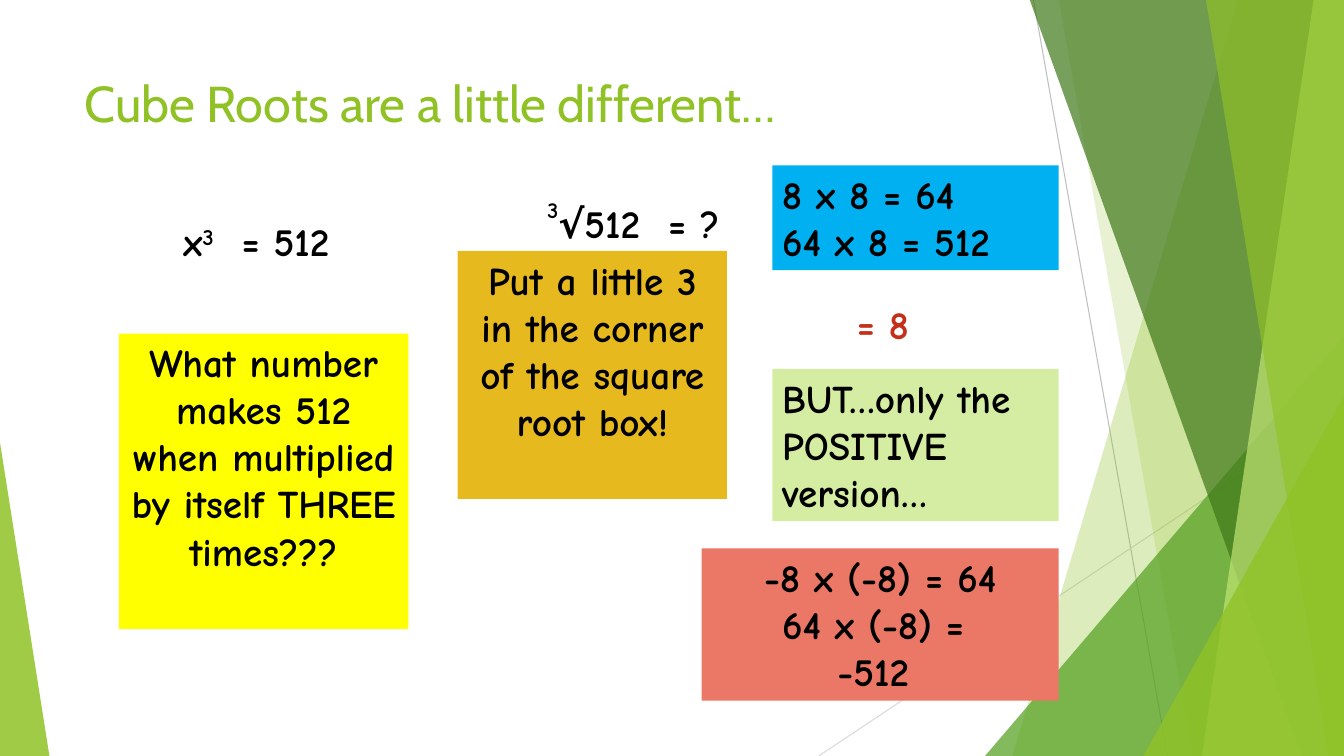
from dataclasses import dataclass

from lxml import etree
from pptx import Presentation
from pptx.dml.color import RGBColor
from pptx.enum.shapes import MSO_CONNECTOR, MSO_SHAPE
from pptx.enum.text import MSO_ANCHOR, PP_ALIGN
from pptx.oxml.ns import qn
from pptx.util import Inches, Pt

STRAIGHT = MSO_CONNECTOR.STRAIGHT
RECTANGLE = MSO_SHAPE.RECTANGLE
TRIANGLE = MSO_SHAPE.ISOSCELES_TRIANGLE
TOP = MSO_ANCHOR.TOP
LEFT, CENTER = PP_ALIGN.LEFT, PP_ALIGN.CENTER

WIDTH, HEIGHT = 13.33, 7.5
FACET_TOP = -0.01


@dataclass(frozen=True)
class Theme:
    title_font: str = "Cabin"
    body_font: str = "Comic Neue"
    title_size: int = 36
    body_size: int = 28
    index_size: int = 16
    green: str = "90C226"
    mid_green: str = "54A021"
    dark_green: str = "3F7819"
    light_green: str = "C0E474"
    pale_green: str = "D5EDA2"
    yellow: str = "FFFF00"
    gold: str = "E6B91E"
    blue: str = "00B0F0"
    coral: str = "EB7766"
    red: str = "C42F1A"
    black: str = "000000"
    gray: str = "BFBFBF"
    light_gray: str = "D9D9D9"


class SlideBuilder:
    def __init__(self, slide, theme):
        self.slide = slide
        self.theme = theme

    def paint(self, shape, color, opacity=100):
        shape.shadow.inherit = False
        shape.line.fill.background()
        shape.fill.solid()
        shape.fill.fore_color.rgb = RGBColor.from_string(color)
        if opacity < 100:
            color_element = shape._element.spPr.find(qn("a:solidFill"))[0]
            alpha = etree.SubElement(color_element, qn("a:alpha"))
            alpha.set("val", str(opacity * 1000))

    def line(self, start, end, color):
        connector = self.slide.shapes.add_connector(
            STRAIGHT, *(Inches(value) for value in start + end))
        connector.line.color.rgb = RGBColor.from_string(color)
        connector.line.width = Pt(0.75)
        etree.SubElement(connector._element.spPr, qn("a:effectLst"))

    def facet(self, top_x, bottom_x, color, opacity):
        builder = self.slide.shapes.build_freeform(
            Inches(top_x), Inches(FACET_TOP))
        builder.add_line_segments([
            (Inches(WIDTH), Inches(FACET_TOP)),
            (Inches(WIDTH), Inches(HEIGHT)),
            (Inches(bottom_x), Inches(HEIGHT)),
        ])
        self.paint(builder.convert_to_shape(), color, opacity)

    def triangle(self, left, top, width, apex, color, opacity):
        shape = self.slide.shapes.add_shape(
            TRIANGLE, Inches(left), Inches(top),
            Inches(width), Inches(HEIGHT - top))
        shape.adjustments[0] = apex
        self.paint(shape, color, opacity)

    def format_runs(self, paragraph, font, size, color, bold):
        for run in paragraph.runs:
            run.font.name = font
            run.font.size = Pt(size)
            run.font.bold = bold
            run.font.color.rgb = RGBColor.from_string(color)

    def title(self, text, left, top, width, height):
        shape = self.slide.shapes.title
        shape.left, shape.top = Inches(left), Inches(top)
        shape.width, shape.height = Inches(width), Inches(height)
        text_frame = shape.text_frame
        text_frame.text = text
        text_frame.vertical_anchor = TOP
        paragraph = text_frame.paragraphs[0]
        paragraph.alignment = LEFT
        self.format_runs(paragraph, self.theme.title_font,
                         self.theme.title_size, self.theme.green, False)

    def fill_text(self, shape, text, align=LEFT, size=None, color=None):
        text_frame = shape.text_frame
        text_frame.word_wrap = True
        text_frame.vertical_anchor = TOP
        text_frame.text = text
        for paragraph in text_frame.paragraphs:
            paragraph.alignment = align
            self.format_runs(paragraph, self.theme.body_font,
                             size or self.theme.body_size,
                             color or self.theme.black, True)

    def label(self, text, left, top, width, height=0.57, **style):
        shape = self.slide.shapes.add_textbox(
            Inches(left), Inches(top), Inches(width), Inches(height))
        self.fill_text(shape, text, **style)
        return shape

    def power(self, base, exponent, rest, left, top, width):
        shape = self.label(base, left, top, width)
        paragraph = shape.text_frame.paragraphs[0]
        for text in (exponent, rest):
            paragraph.add_run().text = text
        self.format_runs(paragraph, self.theme.body_font,
                         self.theme.body_size, self.theme.black, True)
        paragraph.runs[1].font._element.set("baseline", "30000")

    def card(self, text, left, top, width, height, fill, align=LEFT):
        shape = self.slide.shapes.add_shape(
            RECTANGLE, Inches(left), Inches(top),
            Inches(width), Inches(height))
        self.paint(shape, fill)
        self.fill_text(shape, text, align)


def main():
    presentation = Presentation()
    presentation.slide_width = Inches(WIDTH)
    presentation.slide_height = Inches(HEIGHT)
    slide = presentation.slides.add_slide(presentation.slide_layouts[5])
    theme = Theme()
    builder = SlideBuilder(slide, theme)

    builder.line((10.25, 0), (11.58, HEIGHT), theme.gray)
    builder.line((WIDTH, 4.03), (8.12, HEIGHT), theme.light_gray)
    builder.facet(12.28, 10.04, theme.green, 30)
    builder.facet(10.5, 11.83, theme.green, 20)
    builder.triangle(9.77, 3.33, 3.56, 1, theme.mid_green, 72)
    builder.facet(10.21, 12.91, theme.dark_green, 70)
    builder.facet(13.03, 11.92, theme.light_green, 70)
    builder.facet(11.96, 13.18, theme.green, 65)
    builder.triangle(11.34, 3.93, 1.99, 1, theme.green, 80)
    builder.triangle(0, 4.39, 0.49, 0, theme.green, 85)

    builder.title("Cube Roots are a little different…", 0.74, 0.67, 9.4, 1.44)

    builder.power("x", "3", "  = 512", 1.72, 2.11, 2.22)
    builder.card("What number makes 512 when multiplied by itself THREE times???",
                 1.18, 3.31, 2.87, 2.93, theme.yellow, CENTER)

    builder.label("√512  = ?", 5.44, 1.93, 2.22)
    builder.label("3", 5.33, 1.9, 0.42, 0.37, size=theme.index_size)
    builder.card("Put a little 3 in the corner of the square root box!",
                 4.54, 2.49, 2.67, 2.46, theme.gold, CENTER)

    builder.card("8 x 8 = 64\n64 x 8 = 512", 7.66, 1.64, 2.84, 1.04, theme.blue)
    builder.label("= 8", 8.4, 2.93, 1.09, color=theme.red)
    builder.card("BUT…only the POSITIVE version…",
                 7.66, 3.66, 2.84, 1.51, theme.pale_green)
    builder.card("-8 x (-8) = 64\n64 x (-8) = \n-512 ",
                 6.96, 5.44, 3.54, 1.51, theme.coral, CENTER)

    presentation.save("out.pptx")


if __name__ == "__main__":
    main()
